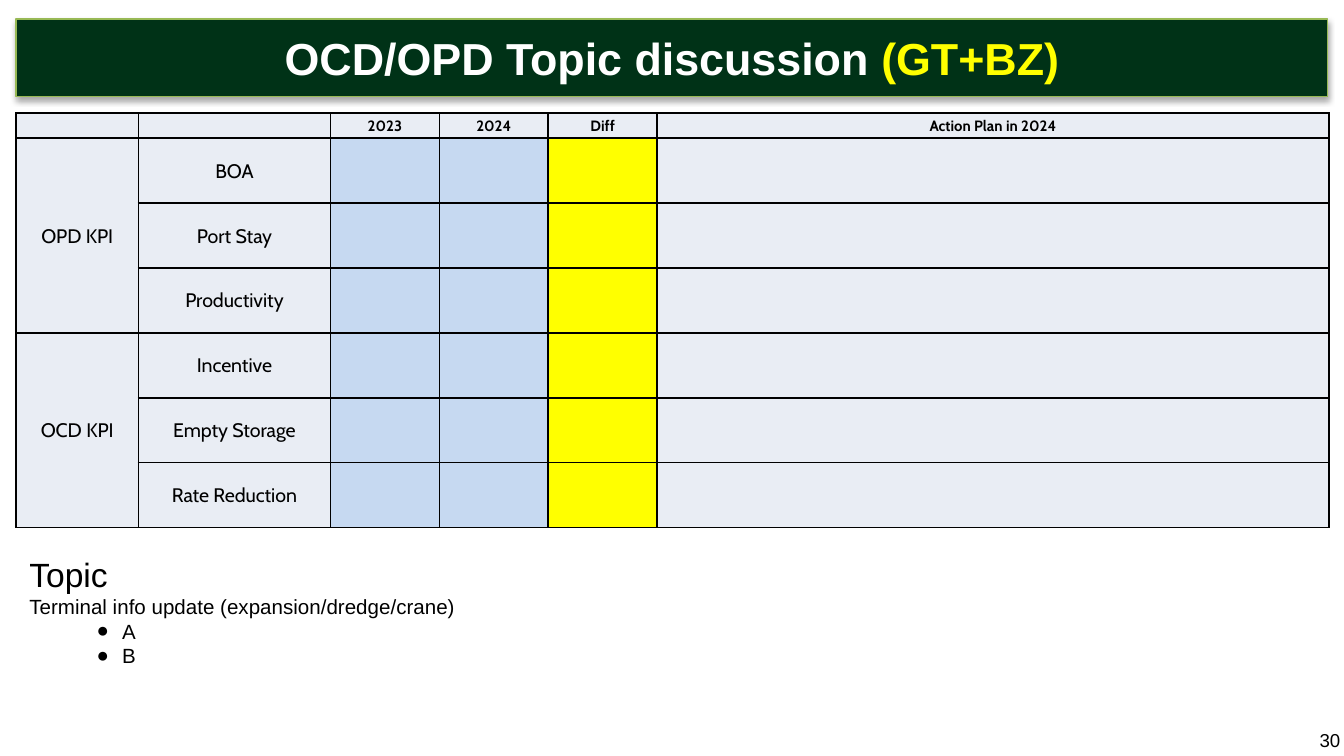
from lxml.etree import SubElement
from pptx import Presentation
from pptx.dml.color import RGBColor
from pptx.enum.shapes import MSO_SHAPE as Shape
from pptx.enum.text import MSO_ANCHOR as Anchor, PP_ALIGN as Align
from pptx.oxml import parse_xml
from pptx.oxml.ns import nsdecls, qn
from pptx.util import Inches, Pt


def color(value):
    return RGBColor.from_string(value)


def write(para, text, size=10.5, font="Arial", fill="000000", bold=False, align=Align.LEFT):
    """Append one formatted span; empty text only sets the line's size."""
    para.alignment = align
    if not text:
        SubElement(para._p, qn("a:endParaRPr"), sz=str(int(size * 100)))
        return
    span = para.add_run()
    span.text = text
    span.font.size, span.font.name, span.font.bold = Pt(size), font, bold
    span.font.color.rgb = color(fill)


deck = Presentation()
deck.slide_width = Inches(10)
deck.slide_height = deck.slide_width * 9 // 16
page = deck.slides.add_slide(deck.slide_layouts[6])
left = Inches(0.12)
width = deck.slide_width - 2 * left

# Title banner
banner = page.shapes.add_shape(Shape.RECTANGLE, left, Inches(0.14), width, Inches(0.58))
banner.fill.solid()
banner.fill.fore_color.rgb = color("003217")
banner.line.color.rgb = color("98B955")
banner.line.width = Pt(0.75)
banner.shadow.inherit = False
banner._element.spPr.find(qn("a:effectLst")).append(parse_xml(
    f'<a:outerShdw {nsdecls("a")} blurRad="{Pt(3.1)}" dist="{Pt(1.8)}" dir="5400000" rotWithShape="0">'
    '<a:srgbClr val="000000"><a:alpha val="35000"/></a:srgbClr></a:outerShdw>'))
frame = banner.text_frame
frame.margin_left = frame.margin_right = frame.margin_top = frame.margin_bottom = 0
frame.vertical_anchor = Anchor.MIDDLE
for text, fill in (("OCD/OPD Topic discussion ", "FFFFFF"), ("(GT+BZ)", "FFFF00")):
    write(frame.paragraphs[0], text, size=24, fill=fill, bold=True, align=Align.CENTER)

# KPI table
header = ["", "", "2023", "2024", "Diff", "Action Plan in 2024"]
groups = {
    "OPD KPI": ["BOA", "Port Stay", "Productivity"],
    "OCD KPI": ["Incentive", "Empty Storage", "Rate Reduction"],
}
rows = [header]
for group, measures in groups.items():
    for index, measure in enumerate(measures):
        rows.append([group if index == 0 else "", measure, "", "", "", ""])
column_widths = [0.91, 1.43, 0.81, 0.81, 0.81, 5]
body_fills = ["E9EDF4", "E9EDF4", "C6D9F1", "C6D9F1", "FFFF00", "E9EDF4"]
table_height, header_height = 3.07, 0.17
row_height = (table_height - header_height) / (len(rows) - 1)

table = page.shapes.add_table(len(rows), len(header), left, Inches(0.84), width,
                              Inches(table_height)).table
for column, column_width in zip(table.columns, column_widths):
    column.width = Inches(column_width)
for r, texts in enumerate(rows):
    table.rows[r].height = Inches(row_height if r else header_height)
    for c, text in enumerate(texts):
        cell = table.cell(r, c)
        cell.margin_left = cell.margin_right = cell.margin_top = Inches(0.01)
        cell.margin_bottom = 0
        cell.vertical_anchor = Anchor.MIDDLE
        cell.fill.solid()
        cell.fill.fore_color.rgb = color(body_fills[c] if r else "E9EDF4")
        write(cell.text_frame.paragraphs[0], text, size=10.5 if r or not text else 8,
              font="Cabin", bold=r == 0, align=Align.CENTER)
        for place, side in enumerate("LRTB"):
            cell._tc.get_or_add_tcPr().insert(place, parse_xml(
                f'<a:ln{side} {nsdecls("a")} w="{Pt(1)}"><a:solidFill>'
                f'<a:srgbClr val="000000"/></a:solidFill></a:ln{side}>'))
for first_row in (1, 4):
    table.cell(first_row, 0).merge(table.cell(first_row + 2, 0))

# Topic notes
topic_box = page.shapes.add_textbox(left, Inches(4.07), width, Inches(1.33))
frame = topic_box.text_frame
frame.word_wrap = True
write(frame.paragraphs[0], "Topic", size=18)
write(frame.add_paragraph(), "Terminal info update (expansion/dredge/crane)", size=11)
for text in ("A", "B"):
    para = frame.add_paragraph()
    para.level = 1
    write(para, text, size=11)
    props = para._p.get_or_add_pPr()
    props.set("marL", str(Inches(0.69)))
    props.set("indent", str(Inches(-0.19)))
    SubElement(props, qn("a:buFont"), typeface="Arial")
    SubElement(props, qn("a:buChar"), char="●")

# Page number
number_box = page.shapes.add_textbox(Inches(9.72), Inches(5.39), Inches(0.64), Inches(0.23))
number_box.text_frame.word_wrap = True
number_box.text_frame.vertical_anchor = Anchor.MIDDLE
write(number_box.text_frame.paragraphs[0], "30", size=10)

deck.save("out.pptx")
